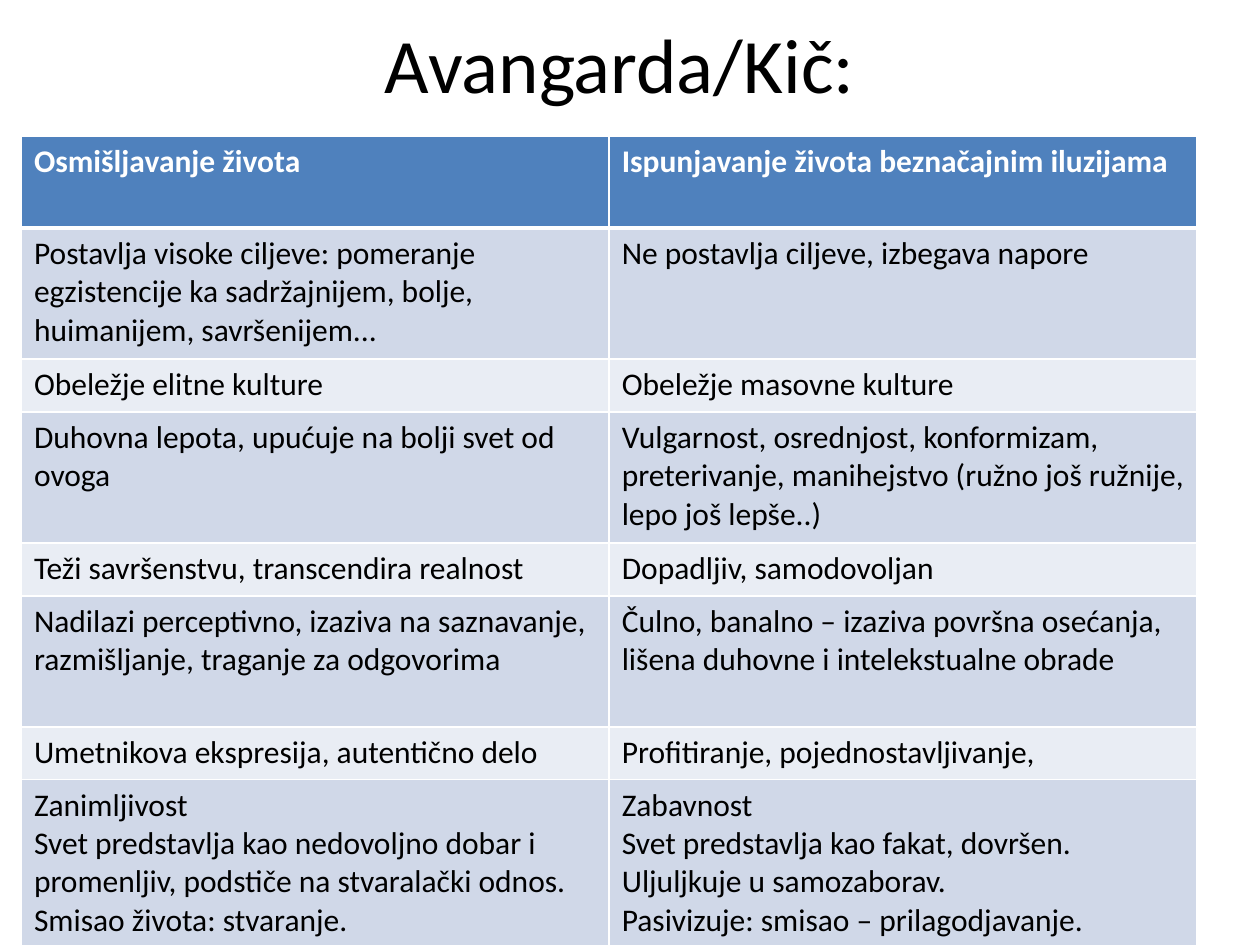
from lxml.etree import SubElement
from pptx import Presentation
from pptx.dml.color import RGBColor
from pptx.enum.text import MSO_ANCHOR, PP_ALIGN
from pptx.oxml.ns import qn
from pptx.util import Inches, Pt

FONT = "Calibri"
BLACK = RGBColor(0x00, 0x00, 0x00)
WHITE = RGBColor(0xFF, 0xFF, 0xFF)
HEADER_BLUE = RGBColor(0x4F, 0x81, 0xBD)
BAND_DARK = RGBColor(0xD0, 0xD8, 0xE8)
BAND_LIGHT = RGBColor(0xE9, 0xED, 0xF4)

TITLE = "Avangarda/Kič:"
# Each row: height in inches, avant-garde cell, kitsch cell
ROWS = [
    (0.73, "Osmišljavanje života", "Ispunjavanje života beznačajnim iluzijama"),
    (1.04, "Postavlja visoke ciljeve: pomeranje egzistencije ka sadržajnijem, "
           "bolje, huimanijem, savršenijem...",
     "Ne postavlja ciljeve, izbegava napore"),
    (0.42, "Obeležje elitne kulture", "Obeležje masovne kulture"),
    (1.04, "Duhovna lepota, upućuje na bolji svet od ovoga",
     "Vulgarnost, osrednjost, konformizam, preterivanje, manihejstvo "
     "(ružno još ružnije, lepo još lepše..)"),
    (0.42, "Teži savršenstvu, transcendira realnost", "Dopadljiv, samodovoljan"),
    (1.04, "Nadilazi perceptivno, izaziva na saznavanje, razmišljanje, "
           "traganje za odgovorima",
     "Čulno, banalno – izaziva površna osećanja, lišena duhovne i "
     "intelekstualne obrade"),
    (0.42, "Umetnikova ekspresija, autentično delo",
     "Profitiranje, pojednostavljivanje,"),
    (1.31, "Zanimljivost\n"
           "Svet predstavlja kao nedovoljno dobar i promenljiv, podstiče na "
           "stvaralački odnos.\n"
           "Smisao života: stvaranje.",
     "Zabavnost\n"
     "Svet predstavlja kao fakat, dovršen.\n"
     "Uljuljkuje u samozaborav.\n"
     "Pasivizuje: smisao – prilagodjavanje."),
]


def set_font(p, size, color, bold=False):
    p.font.name = FONT
    p.font.size = Pt(size)
    p.font.bold = bold
    p.font.color.rgb = color


def set_borders(cell, top, bottom):
    """Draw white cell borders; must run before the fill is set."""
    tcPr = cell._tc.get_or_add_tcPr()
    for side, width in (("L", 1), ("R", 1), ("T", top), ("B", bottom)):
        ln = SubElement(tcPr, qn(f"a:ln{side}"), w=str(Pt(width)))
        fill = SubElement(ln, qn("a:solidFill"))
        SubElement(fill, qn("a:srgbClr"), val=str(WHITE))


def add_title(s, left, top, width, height):
    title = s.shapes.title
    title.left, title.top, title.width, title.height = left, top, width, height
    tf = title.text_frame
    tf.text = TITLE
    tf.vertical_anchor = MSO_ANCHOR.MIDDLE
    p = tf.paragraphs[0]
    p.alignment = PP_ALIGN.CENTER
    set_font(p, 44, BLACK)


def add_comparison(s, left, top, width, height):
    table = s.shapes.add_table(len(ROWS), 2, left, top, width, height).table
    for column in table.columns:
        column.width = width // 2
    for i, (row_height, *texts) in enumerate(ROWS):
        table.rows[i].height = Inches(row_height)
        header = i == 0
        band = BAND_DARK if i % 2 else BAND_LIGHT
        for j, text in enumerate(texts):
            cell = table.cell(i, j)
            set_borders(cell, top=3 if i == 1 else 1, bottom=3 if header else 1)
            cell.fill.solid()
            cell.fill.fore_color.rgb = HEADER_BLUE if header else band
            cell.text = text
            for p in cell.text_frame.paragraphs:
                set_font(p, 18, WHITE if header else BLACK, bold=header)


def main():
    prs = Presentation()
    prs.slide_width, prs.slide_height = Inches(10), Inches(7.5)
    s = prs.slides.add_slide(prs.slide_layouts[5])
    add_title(s, Inches(0.42), Inches(0), Inches(9), Inches(1))
    add_comparison(s, Inches(0.17), Inches(1.08), Inches(9.33), Inches(6.42))
    prs.save("out.pptx")


if __name__ == "__main__":
    main()
